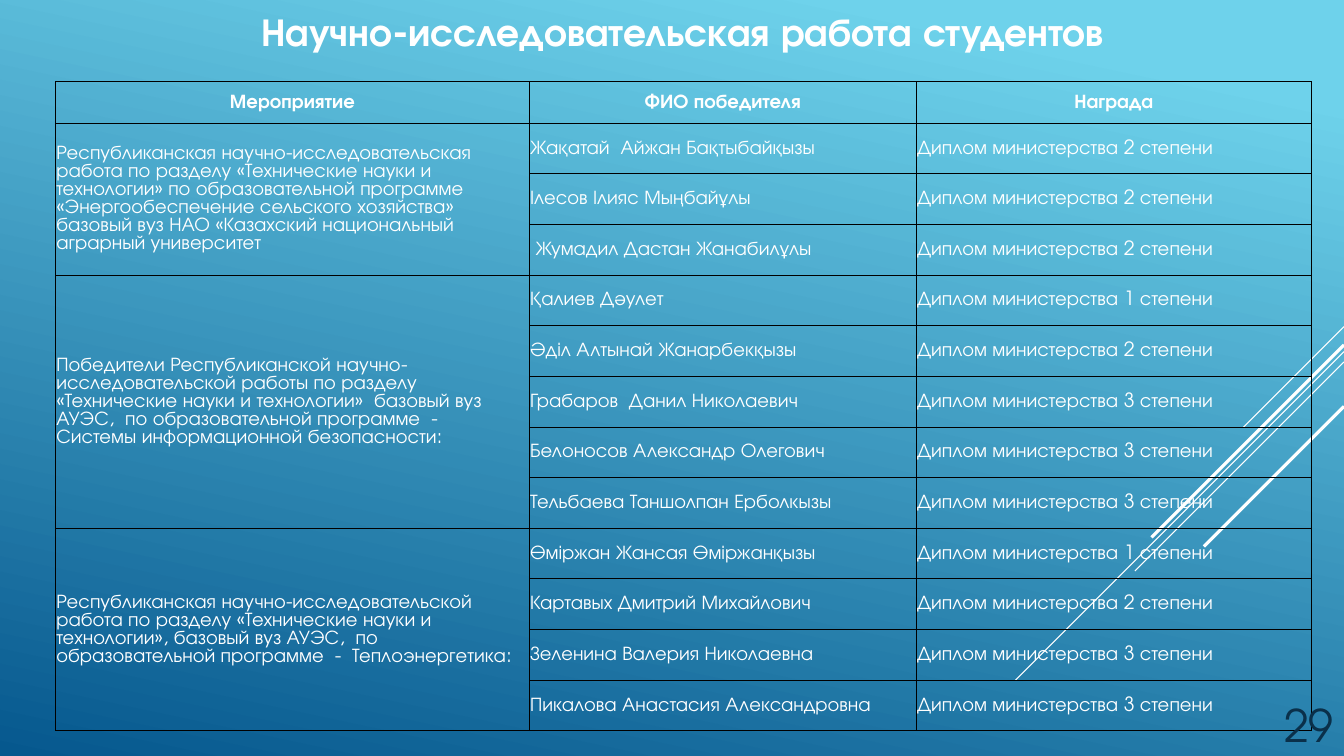
import pptx
import pptx.dml.color
import pptx.enum.text
import pptx.enum.shapes
import pptx.oxml
import pptx.util
from pptx.util import Cm, Pt
from pptx.enum.text import MSO_ANCHOR, PP_ALIGN

FONT = "TeX Gyre Adventor"
WHITE, BLACK, NAVY = "FFFFFF", "000000", "0A304A"
SLIDE_W, SLIDE_H = 33.87, 19.05

TITLE = "Научно-исследовательская работа студентов"
PAGE = "29"
HEADERS = ["Мероприятие", "ФИО победителя", "Награда"]
AWARD = "Диплом министерства {} степени"
# Event, then its winners with the degree of each diploma
EVENTS = [
    ("Республиканская научно-исследовательская работа по разделу «Технические науки и "
     "технологии» по образовательной программе  «Энергообеспечение сельского хозяйства» "
     "базовый вуз НАО «Казахский национальный аграрный университет",
     [("Жақатай  Айжан Бақтыбайқызы", 2),
      ("Ілесов Ілияс Мыңбайұлы", 2),
      (" Жумадил Дастан Жанабилұлы", 2)]),
    ("Победители Республиканской научно-исследовательской работы по разделу «Технические "
     "науки и технологии»  базовый вуз АУЭС,  по образовательной программе  -  Системы "
     "информационной безопасности:",
     [("Қалиев Дәулет", 1),
      ("Әділ Алтынай Жанарбекқызы", 2),
      ("Грабаров  Данил Николаевич", 3),
      ("Белоносов Александр Олегович", 3),
      ("Тельбаева Таншолпан Ерболкызы", 3)]),
    ("Республиканская научно-исследовательской работа по разделу «Технические науки и "
     "технологии», базовый вуз АУЭС,  по образовательной программе  -  Теплоэнергетика:",
     [("Өміржан Жансая Өміржанқызы", 1),
      ("Картавых Дмитрий Михайлович", 2),
      ("Зеленина Валерия Николаевна", 3),
      ("Пикалова Анастасия Александровна", 3)]),
]
TABLE_LEFT, TABLE_TOP, TABLE_H, HEADER_H = 1.4, 2.06, 16.36, 1.04
COL_WIDTHS = [11.94, 9.75, 9.96]
# Diagonals from the right edge: start height, run to the left and down, line width
DIAGONALS = [(8.23, 2.54, 0.75), (8.86, 8.28, 0.75), (9.12, 5.27, 0.75),
             (8.69, 4.85, 2.25), (10.24, 3.53, 2.25)]


def rgb(value):
    return pptx.dml.color.RGBColor.from_string(value)


def write(tf, text, size, color=WHITE, bold=False, align=PP_ALIGN.LEFT, spacing=None):
    tf.text = text
    tf.word_wrap = True
    p = tf.paragraphs[0]
    p.alignment = align
    p.space_before = p.space_after = Pt(0)
    p.line_spacing = spacing
    font = p.runs[0].font
    font.name, font.size, font.bold = FONT, Pt(size), bold
    font.color.rgb = rgb(color)


def set_borders(cell):
    tc_pr = cell._tc.get_or_add_tcPr()
    for i, side in enumerate(("lnL", "lnR", "lnT", "lnB")):
        tc_pr.insert(i, pptx.oxml.parse_xml(
            f'<a:{side} xmlns:a="http://schemas.openxmlformats.org/drawingml/2006/main" '
            f'w="{Pt(0.5)}"><a:solidFill><a:srgbClr val="{BLACK}"/></a:solidFill></a:{side}>'))


def add_background(s):
    fill = s.background.fill
    fill.gradient()
    fill.gradient_angle = 258
    for stop, color, pos in zip(fill.gradient_stops, ("6ED2EB", "06588E"), (0.1, 1)):
        stop.color.rgb = rgb(color)
        stop.position = pos


def add_diagonals(s):
    for top, run, width in DIAGONALS:
        line = s.shapes.add_connector(
            pptx.enum.shapes.MSO_CONNECTOR.STRAIGHT,
            Cm(SLIDE_W), Cm(top), Cm(SLIDE_W - run), Cm(top + run))
        line.line.color.rgb = rgb(WHITE)
        line.line.width = Pt(width)
        line._element.spPr.append(pptx.oxml.parse_xml(
            '<a:effectLst xmlns:a="http://schemas.openxmlformats.org/drawingml/2006/main"/>'))


def add_winners(s):
    rows = [HEADERS]
    spans = []
    for event, winners in EVENTS:
        spans.append((len(rows), len(rows) + len(winners) - 1))
        for i, (name, degree) in enumerate(winners):
            rows.append(["" if i else event, name, AWARD.format(degree)])

    table = s.shapes.add_table(len(rows), len(HEADERS), Cm(TABLE_LEFT), Cm(TABLE_TOP),
                               Cm(sum(COL_WIDTHS)), Cm(TABLE_H)).table
    table.first_row = table.horz_banding = False
    for col, width in zip(table.columns, COL_WIDTHS):
        col.width = Cm(width)
    body_h = (TABLE_H - HEADER_H) / (len(rows) - 1)
    for r, texts in enumerate(rows):
        table.rows[r].height = Cm(body_h if r else HEADER_H)
        for c, text in enumerate(texts):
            cell = table.cell(r, c)
            cell.margin_left = cell.margin_right = cell.margin_top = Cm(0.02)
            cell.margin_bottom = 0
            cell.vertical_anchor = MSO_ANCHOR.MIDDLE
            cell.fill.background()
            set_borders(cell)
            if text:
                write(cell.text_frame, text, 14, bold=r == 0, spacing=Pt(12.85),
                      align=PP_ALIGN.LEFT if r else PP_ALIGN.CENTER)
    for first, last in spans:
        table.cell(first, 0).merge(table.cell(last, 0))


def main():
    prs = pptx.Presentation()
    prs.slide_width, prs.slide_height = Cm(SLIDE_W), Cm(SLIDE_H)
    s = prs.slides.add_slide(prs.slide_layouts[5])
    add_background(s)
    add_diagonals(s)

    title = s.shapes.title
    title.left, title.top, title.width, title.height = Cm(4.52), Cm(0.05), Cm(25.37), Cm(1.45)
    write(title.text_frame, TITLE, 28, bold=True, align=PP_ALIGN.CENTER)
    title.text_frame.vertical_anchor = MSO_ANCHOR.MIDDLE
    title.text_frame.auto_size = pptx.enum.text.MSO_AUTO_SIZE.NONE

    add_winners(s)

    page = s.shapes.add_textbox(Cm(30.68), Cm(17.2), Cm(3.18), Cm(1.85))
    write(page.text_frame, PAGE, 32, color=NAVY, align=PP_ALIGN.RIGHT)
    page.text_frame.vertical_anchor = MSO_ANCHOR.BOTTOM
    prs.save("out.pptx")


if __name__ == "__main__":
    main()
